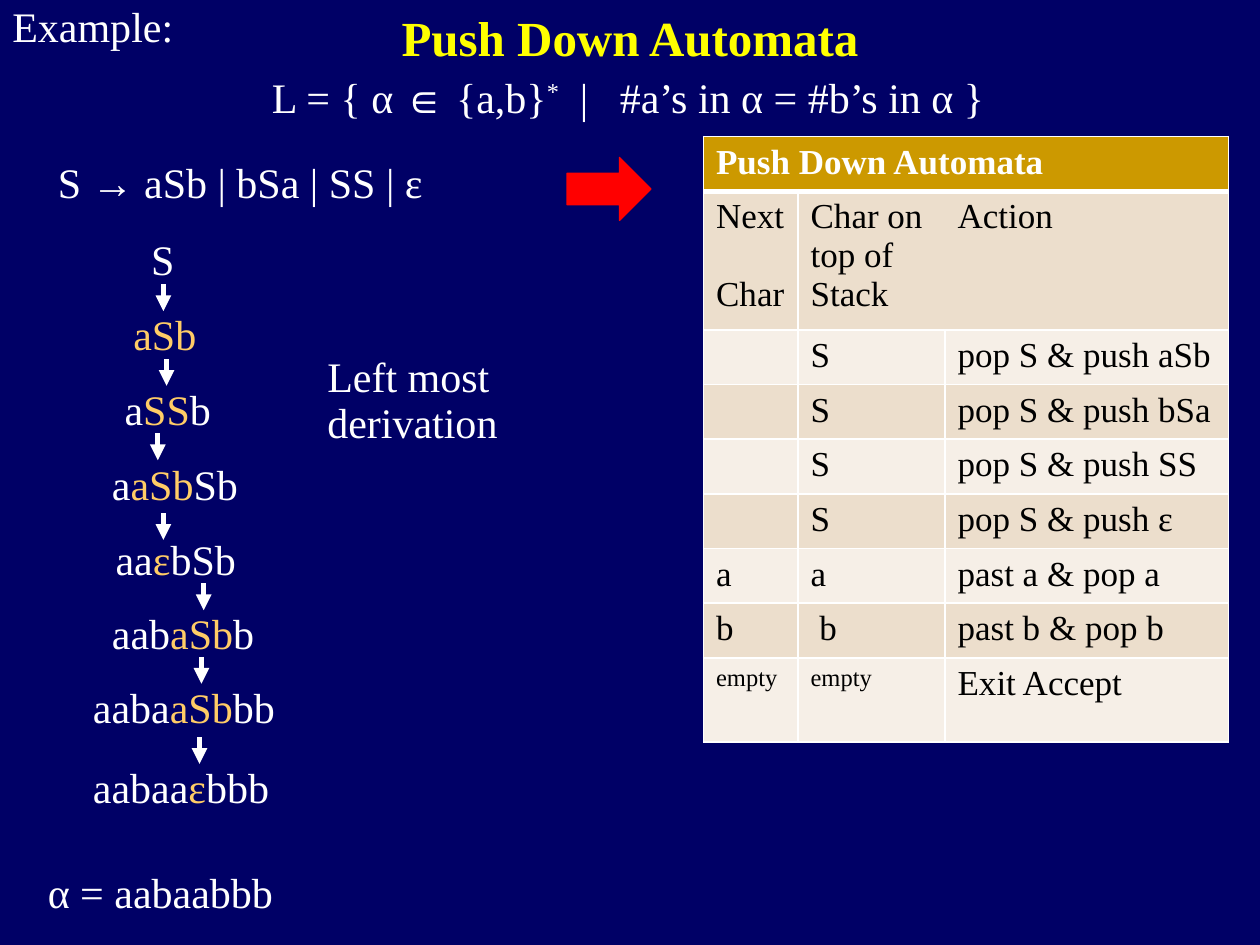
from typing import NamedTuple

from lxml import etree
from pptx import Presentation
from pptx import util as u
from pptx.dml import color
from pptx.enum import shapes, text
from pptx.oxml import ns

FONT = "Times New Roman"
WHITE, BLACK, YELLOW, RED = "FFFFFF", "000000", "FFFF00", "FF0000"
NAVY, ORANGE, GOLD = "000066", "FFCC66", "CC9900"
BANDS = ("F6EFE7", "ECDECC")
ARROW_LENGTH = 15.3


class Label(NamedTuple):
    left: float
    top: float
    width: float
    height: float
    content: str


class Step(NamedTuple):
    left: float
    top: float
    before: str
    replaced: str
    after: str


class Arrow(NamedTuple):
    x: float
    y: float


LABELS = [
    Label(26, 89.3, 476, 33, "S → aSb | bSa | SS | ε"),
    Label(0, 0, 119.5, 33, "Example:"),
    Label(180, 200.2, 119.5, 60, "Left most derivation"),
]
STEPS = [
    Step(79.2, 133.2, "S", "", ""),
    Step(69.1, 176.2, "", "aSb", ""),
    Step(64.1, 218.9, "a", "SS", "b"),
    Step(56.9, 261.5, "a", "aSb", "Sb"),
    Step(59, 304.4, "aa", "ε", "bSb"),
    Step(56.9, 347, "aab", "aSb", "b"),
    Step(46, 389, "aaba", "aSb", "bb"),
    Step(46, 434.7, "aabaa", "ε", "bbb"),
]
ARROWS = [
    Arrow(93.4, 162.5), Arrow(95.2, 205.2), Arrow(90.2, 247.7),
    Arrow(93.4, 293.2), Arrow(116.4, 333.4), Arrow(115.1, 375.4),
    Arrow(114, 421.2),
]
COL_WIDTHS = (54, 84, 162)
ROW_HEIGHTS = (31, 79.2, *[31.2] * 6, 48)
ROWS = [
    ("Push Down Automata", "", ""),
    ("Next \vChar", "Char on top of Stack", "Action"),
    ("", "S", "pop S & push aSb"),
    ("", "S", "pop S & push bSa"),
    ("", "S", "pop S & push SS"),
    ("", "S", "pop S & push ε"),
    ("a", "a", "past a & pop a"),
    ("b", " b", "past b & pop b"),
    ("empty", "empty", "Exit Accept"),
]


def rgb(value: str) -> color.RGBColor:
    return color.RGBColor.from_string(value)


def style(r, size: float, fill: str, bold: bool = False) -> None:
    r.font.name = FONT
    r.font.size = u.Pt(size)
    r.font.bold = bold
    r.font.color.rgb = rgb(fill)


def add_text(s, left: float, top: float, width: float, height: float,
             content: str = "", size: float = 24, fill: str = WHITE,
             bold: bool = False, spacing: float = 0.9, wrap: bool = True):
    sp = s.shapes.add_textbox(u.Pt(left), u.Pt(top), u.Pt(width), u.Pt(height))
    tf = sp.text_frame
    tf.word_wrap = wrap
    p = tf.paragraphs[0]
    p.line_spacing = spacing
    p.text = content
    for r in p.runs:
        style(r, size, fill, bold)
    return tf


def add_run(p, content: str, fill: str = WHITE):
    r = p.add_run()
    r.text = content
    style(r, 24, fill)
    return r


def add_step(s, step: Step) -> None:
    p = add_text(s, step.left, step.top, 159, 33).paragraphs[0]
    for content, fill in ((step.before, WHITE), (step.replaced, ORANGE), (step.after, WHITE)):
        if content:
            add_run(p, content, fill)


def add_arrow(s, arrow: Arrow) -> None:
    sp = s.shapes.add_connector(
        shapes.MSO_CONNECTOR.STRAIGHT, u.Pt(arrow.x), u.Pt(arrow.y),
        u.Pt(arrow.x), u.Pt(arrow.y + ARROW_LENGTH))
    sp.line.color.rgb = rgb(WHITE)
    sp.line.width = u.Pt(3)
    etree.SubElement(sp.line._get_or_add_ln(), ns.qn("a:tailEnd"), type="triangle")
    etree.SubElement(sp._element.spPr, ns.qn("a:effectLst"))


def add_border(cell, side: str, width: float) -> None:
    ln = etree.SubElement(cell._tc.get_or_add_tcPr(), ns.qn(f"a:ln{side}"),
                          w=str(u.Pt(width)))
    if width:
        fill = etree.SubElement(ln, ns.qn("a:solidFill"))
        etree.SubElement(fill, ns.qn("a:srgbClr"), val=WHITE)
    else:
        etree.SubElement(ln, ns.qn("a:noFill"))


def add_rules_table(s) -> None:
    frame = s.shapes.add_table(len(ROWS), len(COL_WIDTHS), u.Pt(402), u.Pt(78),
                               u.Pt(sum(COL_WIDTHS)), u.Pt(sum(ROW_HEIGHTS)))
    table = frame.table
    for column, width in zip(table.columns, COL_WIDTHS):
        column.width = u.Pt(width)
    for row, height in zip(table.rows, ROW_HEIGHTS):
        row.height = u.Pt(height)
    for i, row in enumerate(ROWS):
        for j, content in enumerate(row):
            cell = table.cell(i, j)
            widths = {
                "L": 0 if (i, j) == (1, 2) else 1,
                "R": 0 if (i, j) == (1, 1) else 1,
                "T": 3 if i == 1 else 1,
                "B": 3 if i == 0 else 1,
            }
            for side, width in widths.items():
                add_border(cell, side, width)
            cell.fill.solid()
            cell.fill.fore_color.rgb = rgb(BANDS[i % 2] if i else GOLD)
            p = cell.text_frame.paragraphs[0]
            p.text = content
            for r in p.runs:
                style(r, 14 if content == "empty" else 20, BLACK if i else WHITE, i == 0)
    table.cell(0, 0).merge(table.cell(0, 2))


def main() -> None:
    prs = Presentation()
    prs.slide_width, prs.slide_height = u.Pt(720), u.Pt(540)
    s = prs.slides.add_slide(prs.slide_layouts[6])
    s.background.fill.solid()
    s.background.fill.fore_color.rgb = rgb(NAVY)

    tf = add_text(s, 54, -24, 612, 90, "Push Down Automata", 28, YELLOW, True, 1)
    tf.vertical_anchor = text.MSO_ANCHOR.MIDDLE
    tf.paragraphs[0].alignment = text.PP_ALIGN.CENTER

    p = add_text(s, 148.3, 40.3, 476, 33).paragraphs[0]
    add_run(p, "L = { α ∈ {a,b}")
    star = add_run(p, "*")
    star.font._element.set("baseline", "30000")
    add_run(p, "  |   #a’s in α = #b’s in α }")

    sp = s.shapes.add_shape(shapes.MSO_SHAPE.RIGHT_ARROW,
                            u.Pt(324), u.Pt(90), u.Pt(48), u.Pt(36))
    sp.shadow.inherit = False
    sp.fill.solid()
    sp.fill.fore_color.rgb = rgb(RED)
    sp.line.color.rgb = rgb(RED)
    sp.line.width = u.Pt(0.75)

    for label in LABELS:
        add_text(s, *label)
    add_text(s, 20.2, 491.8, 150.5, 36, "α = aabaabbb", spacing=1, wrap=False)
    for step in STEPS:
        add_step(s, step)
    for arrow in ARROWS:
        add_arrow(s, arrow)
    add_rules_table(s)
    prs.save("out.pptx")


if __name__ == "__main__":
    main()
